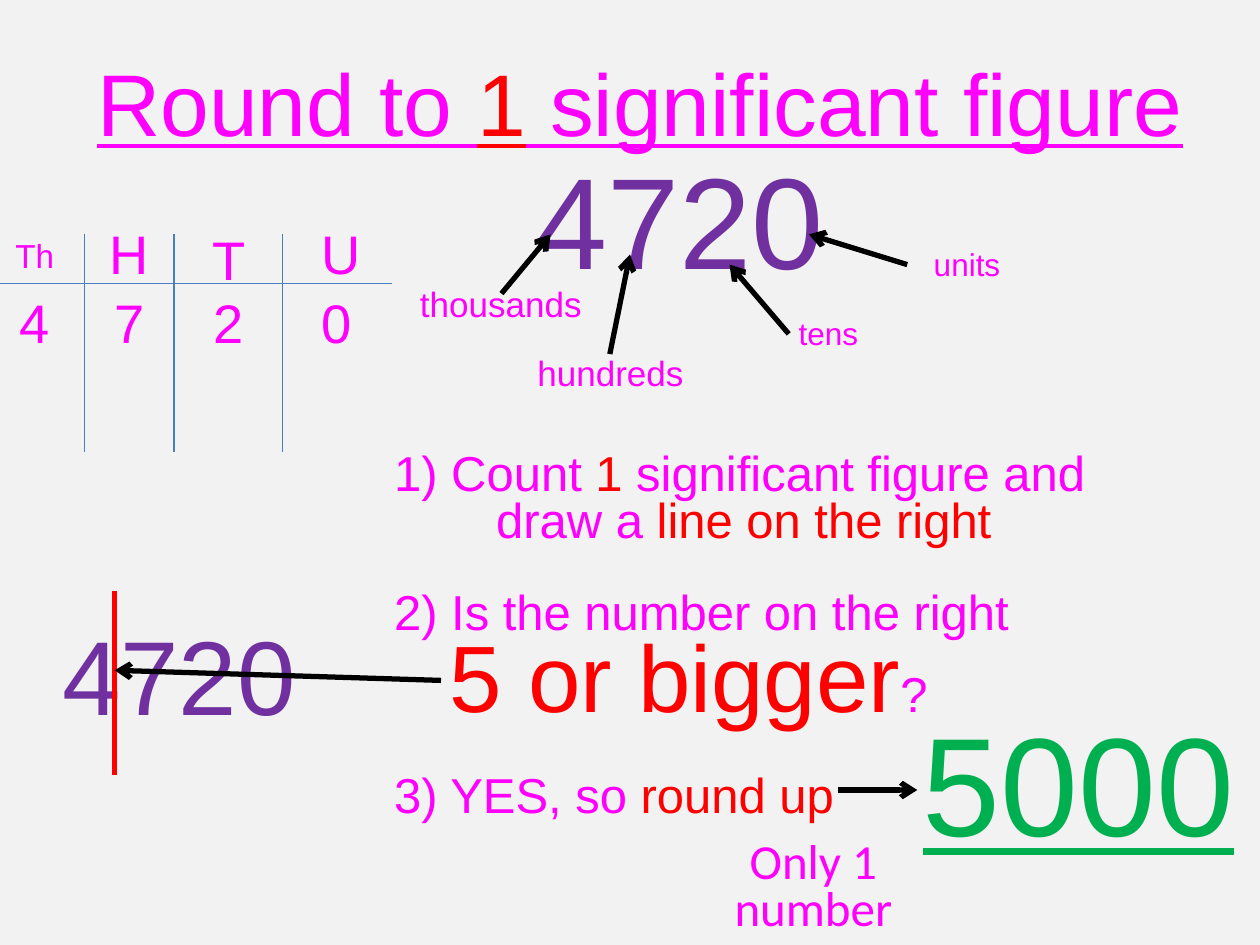
from lxml.etree import SubElement
from pptx import Presentation
from pptx.dml.color import RGBColor
from pptx.enum.shapes import MSO_CONNECTOR
from pptx.enum.text import MSO_ANCHOR, PP_ALIGN
from pptx.oxml.ns import qn
from pptx.util import Inches, Pt

PINK, RED, PURPLE, GREEN = "FF00FF", "FF0000", "7030A0", "00B050"
BLACK, BLUE, GREY = "000000", "4B7EBC", "F2F2F2"


def color(value):
    return RGBColor.from_string(value)


def set_attrs(obj, values):
    for name, value in values.items():
        setattr(obj, name, value)


def add_run(p, text, size, rgb, font="Arial", underline=None):
    r = p.add_run()
    r.text = text
    set_attrs(r.font, {"size": Pt(size), "name": font, "underline": underline})
    r.font.color.rgb = color(rgb)


def add_box(s, box, **frame):
    """Add an empty text box and return its text frame."""
    tf = s.shapes.add_textbox(*map(Inches, box)).text_frame
    set_attrs(tf, {"word_wrap": True, "vertical_anchor": MSO_ANCHOR.MIDDLE, **frame})
    return tf


def add_label(s, box, runs, size, spacing=None, font="Arial", underline=None, **frame):
    """Add one centred paragraph made of (text, colour) runs."""
    p = add_box(s, box, **frame).paragraphs[0]
    set_attrs(p, {"alignment": PP_ALIGN.CENTER, "line_spacing": spacing})
    for text, rgb in runs:
        add_run(p, text, size, rgb, font, underline)


def add_line(s, start, end, rgb=BLACK, width=3, arrow=False):
    sp = s.shapes.add_connector(MSO_CONNECTOR.STRAIGHT, *map(Inches, start + end))
    sp.line.color.rgb = color(rgb)
    sp.line.width = Pt(width)
    if arrow:
        SubElement(sp.line._get_or_add_ln(), qn("a:tailEnd"), type="arrow")
    SubElement(sp._element.spPr, qn("a:effectLst"))


def add_place_value_grid(s):
    # Rule lines
    add_line(s, (0, 2.25), (3.11, 2.25), BLUE, 0.75)
    for x in (0.67, 1.38, 2.24):
        add_line(s, (x, 1.86), (x, 3.59), BLUE, 0.75)
    # Heading: left, width, size, spacing; digit: left
    columns = [
        ("Th", 0, 0.55, 19, 0.8, "4", 0),
        ("H", 0.67, 0.71, 31, 0.8, "7", 0.75),
        ("T", 1.38, 0.87, 31, None, "2", 1.54),
        ("U", 2.24, 0.94, 31, 0.8, "0", 2.4),
    ]
    for head, left, width, size, spacing, digit, digit_left in columns:
        add_label(s, (left, 1.78, width, 0.55), [(head, PINK)], size, spacing)
        add_label(s, (digit_left, 2.33, 0.55, 0.55), [(digit, PINK)], 31, 0.8)


def add_digit_names(s):
    add_label(s, (4.13, 0.92, 2.52, 1.61), [("4720", PURPLE)], 74)
    names = [
        ("thousands", (2.95, 1.94, 2.05, 0.94), 20, (3.98, 2.33), (4.37, 1.86)),
        ("hundreds", (3.82, 2.49, 2.05, 0.94), 20, (4.84, 2.81), (5, 2.02)),
        ("tens", (5.71, 2.25, 1.73, 0.79), 18, (6.26, 2.65), (5.79, 2.1)),
        ("units", (6.81, 1.7, 1.73, 0.79), 18, (7.2, 2.1), (6.42, 1.86)),
    ]
    for name, box, size, start, end in names:
        add_label(s, box, [(name, PINK)], size)
        add_line(s, start, end, arrow=True)


def add_steps(s):
    # Each step: left margin, first-line indent, space before, runs
    steps = [
        (0.81, -0.81, 0, [("1) Count ", 28, PINK), ("1 ", 28, RED),
                          ("significant figure and draw a ", 28, PINK),
                          ("line on the right", 28, RED)]),
        (0.81, -0.81, 26, [("2) Is the number on the right", 28, PINK)]),
        (0.44, 0, 0, [("5 or bigger", 53.9, RED), ("?", 28, PINK)]),
        (0.81, -0.81, 26, [("3) YES, so ", 28, PINK), ("round up", 28, RED)]),
    ]
    tf = add_box(s, (3.03, 3.6, 6.54, 3.07), vertical_anchor=MSO_ANCHOR.TOP, margin_top=0)
    for i, (margin, indent, before, runs) in enumerate(steps):
        p = tf.add_paragraph() if i else tf.paragraphs[0]
        set_attrs(p, {"line_spacing": 0.8, "space_before": Pt(before)})
        pPr = p._p.get_or_add_pPr()
        pPr.set("marL", str(Inches(margin)))
        pPr.set("indent", str(Inches(indent)))
        for run in runs:
            add_run(p, *run)


def main():
    prs = Presentation()
    prs.slide_width, prs.slide_height = Inches(10), Inches(7.5)
    s = prs.slides.add_slide(prs.slide_layouts[6])
    s.background.fill.solid()
    s.background.fill.fore_color.rgb = color(GREY)

    # Title
    title = [("Round to ", PINK), ("1", RED), (" significant figure", PINK)]
    add_label(s, (0.59, 0, 8.98, 1.61), title, 50, underline=True)

    # Place values
    add_place_value_grid(s)
    add_digit_names(s)

    # Number cut after its first figure
    add_label(s, (0.28, 4.54, 2.28, 1.61), [("4720", PURPLE)], 60)
    add_line(s, (0.91, 4.69), (0.91, 6.15), RED)

    # Method
    add_steps(s)
    add_line(s, (3.5, 5.4), (0.91, 5.32), arrow=True)
    add_line(s, (6.65, 6.27), (7.28, 6.27), arrow=True)

    # Answer
    add_label(s, (7.21, 5.48, 2.7, 1.45), [("5000", GREEN)], 80, underline=True,
              word_wrap=False, vertical_anchor=MSO_ANCHOR.TOP)
    add_label(s, (5.47, 6.71, 1.97, 0.69), [("Only 1 number", PINK)], 28, 0.8, "Calibri")

    prs.save("out.pptx")


if __name__ == "__main__":
    main()
